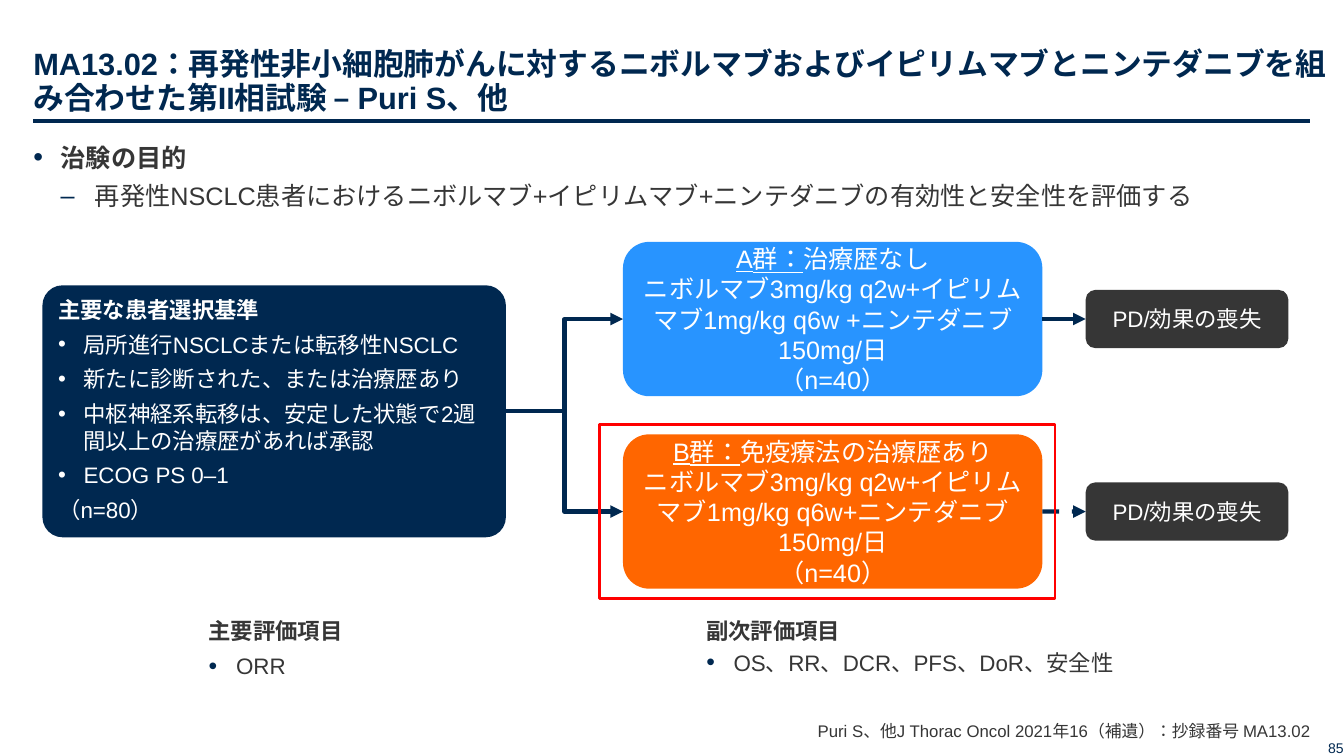
from dataclasses import dataclass

from lxml import etree
from pptx import Presentation
from pptx.dml.color import RGBColor
from pptx.enum.dml import MSO_LINE
from pptx.enum.lang import MSO_LANGUAGE_ID
from pptx.enum.shapes import MSO_CONNECTOR, MSO_SHAPE
from pptx.enum.text import MSO_ANCHOR, MSO_AUTO_SIZE, PP_ALIGN
from pptx.oxml.ns import qn
from pptx.shapes.autoshape import Shape
from pptx.shapes.connector import Connector
from pptx.slide import Slide
from pptx.text.text import TextFrame
from pptx.util import Cm, Pt

ELBOW, STRAIGHT = MSO_CONNECTOR.ELBOW, MSO_CONNECTOR.STRAIGHT
ROUNDED, RECTANGLE = MSO_SHAPE.ROUNDED_RECTANGLE, MSO_SHAPE.RECTANGLE
TOP, MIDDLE, BOTTOM = MSO_ANCHOR.TOP, MSO_ANCHOR.MIDDLE, MSO_ANCHOR.BOTTOM
LEFT, CENTER, RIGHT = PP_ALIGN.LEFT, PP_ALIGN.CENTER, PP_ALIGN.RIGHT
DASH, NO_FIT = MSO_LINE.DASH, MSO_AUTO_SIZE.NONE
JAPANESE = MSO_LANGUAGE_ID.JAPANESE
LEFT_SIDE, RIGHT_SIDE = 1, 3
FONT = "Arial"
COLORS = {
    "navy": "002850", "grey": "363636", "white": "FFFFFF",
    "blue": "2894FF", "orange": "FF6600", "red": "FF0000",
}


@dataclass
class Span:
    text: str
    bold: bool = False
    underline: bool = False


@dataclass
class Para:
    spans: list[Span]
    bullet: str = ""
    margin: float = 0
    hanging: float = 0
    level: int = 0
    bullet_percent: int = 100


@dataclass
class Style:
    size: float
    color: str
    align: PP_ALIGN = LEFT
    anchor: MSO_ANCHOR = TOP
    insets: tuple[float, float, float, float] = (0, 0.13, 0, 0.13)
    before: float = 0
    after: float = 0
    line_spacing: float = 1
    bullet_color: str = "navy"


@dataclass
class Area:
    left: float
    top: float
    width: float
    height: float


@dataclass
class Arm:
    label: str
    history: str
    regimen: str
    color: str
    dashed: bool


def color(name: str) -> RGBColor:
    return RGBColor.from_string(COLORS[name])


def set_bullet(props: etree._Element, item: Para, color_name: str) -> None:
    props.set("marL", str(Cm(item.margin)))
    props.set("indent", str(-Cm(item.hanging)))
    if not item.bullet:
        etree.SubElement(props, qn("a:buNone"))
        return
    tint = etree.SubElement(props, qn("a:buClr"))
    etree.SubElement(tint, qn("a:srgbClr"), val=COLORS[color_name])
    etree.SubElement(props, qn("a:buSzPct"), val=str(item.bullet_percent * 1000))
    etree.SubElement(props, qn("a:buFont"), typeface=FONT)
    etree.SubElement(props, qn("a:buChar"), char=item.bullet)


def write(frame: TextFrame, items: list[Para], style: Style) -> None:
    frame.word_wrap = True
    frame.auto_size = NO_FIT
    frame.vertical_anchor = style.anchor
    (frame.margin_left, frame.margin_top,
     frame.margin_right, frame.margin_bottom) = map(Cm, style.insets)
    for index, item in enumerate(items):
        para = frame.add_paragraph() if index else frame.paragraphs[0]
        para.level = item.level
        para.alignment = style.align
        para.line_spacing = style.line_spacing
        para.space_before = Pt(style.before)
        para.space_after = Pt(style.after)
        set_bullet(para._p.get_or_add_pPr(), item, style.bullet_color)
        for span in item.spans:
            for number, line in enumerate(span.text.split("\n")):
                if number:
                    para.add_line_break()
                run = para.add_run()
                run.text = line
                font = run.font
                font.name, font.size = FONT, Pt(style.size)
                font.bold, font.underline = span.bold, span.underline
                font.color.rgb = color(style.color)
                font.language_id = JAPANESE


def place(shape: Shape, area: Area) -> None:
    shape.left, shape.top = Cm(area.left), Cm(area.top)
    shape.width, shape.height = Cm(area.width), Cm(area.height)


def add_text(page: Slide, area: Area, items: list[Para], style: Style) -> None:
    box = page.shapes.add_textbox(0, 0, 0, 0)
    place(box, area)
    write(box.text_frame, items, style)


def add_box(page: Slide, area: Area, fill: str, corner: float,
            items: list[Para], style: Style) -> Shape:
    box = page.shapes.add_shape(ROUNDED, 0, 0, 0, 0)
    place(box, area)
    box.adjustments[0] = corner
    box.shadow.inherit = False
    box.fill.solid()
    box.fill.fore_color.rgb = color(fill)
    box.line.fill.background()
    write(box.text_frame, items, style)
    return box


def add_line(page: Slide, kind: MSO_CONNECTOR, width: float) -> Connector:
    line = page.shapes.add_connector(kind, 0, 0, 0, 0)
    line.line.color.rgb = color("navy")
    line.line.width = Pt(width)
    etree.SubElement(line._element.spPr, qn("a:effectLst"))
    return line


def add_arrow(page: Slide, kind: MSO_CONNECTOR, start: Shape, end: Shape,
              dashed: bool = False) -> None:
    arrow = add_line(page, kind, 3)
    arrow.begin_connect(start, RIGHT_SIDE)
    arrow.end_connect(end, LEFT_SIDE)
    if dashed:
        arrow.line.dash_style = DASH
    etree.SubElement(arrow.line._get_or_add_ln(), qn("a:tailEnd"), type="triangle")


def plain(text: str, bold: bool = False) -> Para:
    return Para([Span(text, bold)])


def bulleted(text: str, margin: float = 0.69, percent: int = 110,
             bold: bool = False) -> Para:
    return Para([Span(text, bold)], "•", margin, margin, bullet_percent=percent)


def add_header(page: Slide) -> None:
    title, body = page.shapes.title, page.placeholders[1]
    place(title, Area(0.84, 0.3, 32.66, 2.62))
    write(title.text_frame,
          [plain("MA13.02：再発性非小細胞肺がんに対するニボルマブおよびイピリムマブと"
                 "ニンテダニブを組み合わせた第II相試験 – Puri S、他", True)],
          Style(22, "navy", anchor=BOTTOM, insets=(0, 0.13, 0, 0), line_spacing=0.9))
    place(body, Area(0.84, 3.45, 32.18, 14.05))
    aim = Span("再発性NSCLC患者におけるニボルマブ+イピリムマブ+ニンテダニブの有効性と安全性を評価する")
    write(body.text_frame,
          [bulleted("治験の目的", bold=True), Para([aim], "–", 1.55, 0.86, level=1)],
          Style(18, "grey", after=6))
    rule = add_line(page, STRAIGHT, 2.25)
    rule.begin_x, rule.end_x = Cm(0.84), Cm(33.02)
    rule.begin_y = rule.end_y = Cm(3.05)


def add_flow(page: Slide) -> None:
    criteria = ["局所進行NSCLCまたは転移性NSCLC", "新たに診断された、または治療歴あり",
                "中枢神経系転移は、安定した状態で2週間以上の治療歴があれば承認", "ECOG PS 0–1"]
    patients = add_box(
        page, Area(1.07, 7.19, 11.68, 6.35), "navy", 0.08,
        [plain("主要な患者選択基準", True), *(bulleted(text, 0.64, 100) for text in criteria),
         plain("（n=80）")],
        Style(16, "white", insets=(0.25, 0.13, 0.25, 0.13), after=5.5, bullet_color="white"))
    arms = [
        Arm("A群：", "治療歴なし",
            "ニボルマブ3mg/kg q2w+イピリムマブ1mg/kg q6w +ニンテダニブ150mg/日", "blue", False),
        Arm("B群：", "免疫療法の治療歴あり",
            "ニボルマブ3mg/kg q2w+イピリムマブ1mg/kg q6w+ニンテダニブ150mg/日", "orange", True),
    ]
    arm_height, outcome_height = 3.89, 1.47
    insets = (0.25, 0, 0.25, 0)
    for index, arm in enumerate(arms):
        middle = 8.04 + 4.85 * index
        treatment = add_box(
            page, Area(15.7, middle - arm_height / 2, 10.57, arm_height), arm.color, 0.17,
            [Para([Span(arm.label, underline=True), Span(f"{arm.history}\n{arm.regimen}")]),
             plain("（n=40）")],
            Style(18, "white", CENTER, MIDDLE, insets))
        outcome = add_box(
            page, Area(27.36, middle - outcome_height / 2, 5.11, outcome_height), "grey", 0.17,
            [plain("PD/効果の喪失")], Style(16, "white", CENTER, MIDDLE, insets))
        add_arrow(page, ELBOW, patients, treatment)
        add_arrow(page, STRAIGHT, treatment, outcome, arm.dashed)
    highlight = page.shapes.add_shape(RECTANGLE, 0, 0, 0, 0)
    place(highlight, Area(15.11, 10.69, 11.48, 4.39))
    highlight.shadow.inherit = False
    highlight.fill.background()
    highlight.line.color.rgb = color("red")
    highlight.line.width = Pt(2)


def add_endpoints(page: Slide) -> None:
    side = (0.25, 0.13, 0.25, 0.13)
    for left, heading, measures, style in (
        (5.26, "主要評価項目", "ORR", Style(16, "grey", after=6)),
        (17.55, "副次評価項目", "OS、RR、DCR、PFS、DoR、安全性",
         Style(16, "grey", insets=side, before=3.5)),
    ):
        add_text(page, Area(left, 15.42, 11.86, 2.84),
                 [plain(heading, True), bulleted(measures)], style)


def main() -> None:
    deck = Presentation()
    deck.slide_width, deck.slide_height = Cm(33.87), Cm(19.05)
    page = deck.slides.add_slide(deck.slide_layouts[1])
    add_header(page)
    add_flow(page)
    add_endpoints(page)
    add_text(page, Area(17.73, 18.11, 15.29, 0.56),
             [plain("Puri S、他J Thorac Oncol 2021年16（補遺）：抄録番号 MA13.02")],
             Style(12, "grey", RIGHT, BOTTOM, (0, 0, 0, 0)))
    add_text(page, Area(32.21, 18.03, 1.65, 1.02), [plain("85")],
             Style(10, "navy", RIGHT, BOTTOM, (0, 0, 0, 0)))
    deck.save("out.pptx")


if __name__ == "__main__":
    main()
